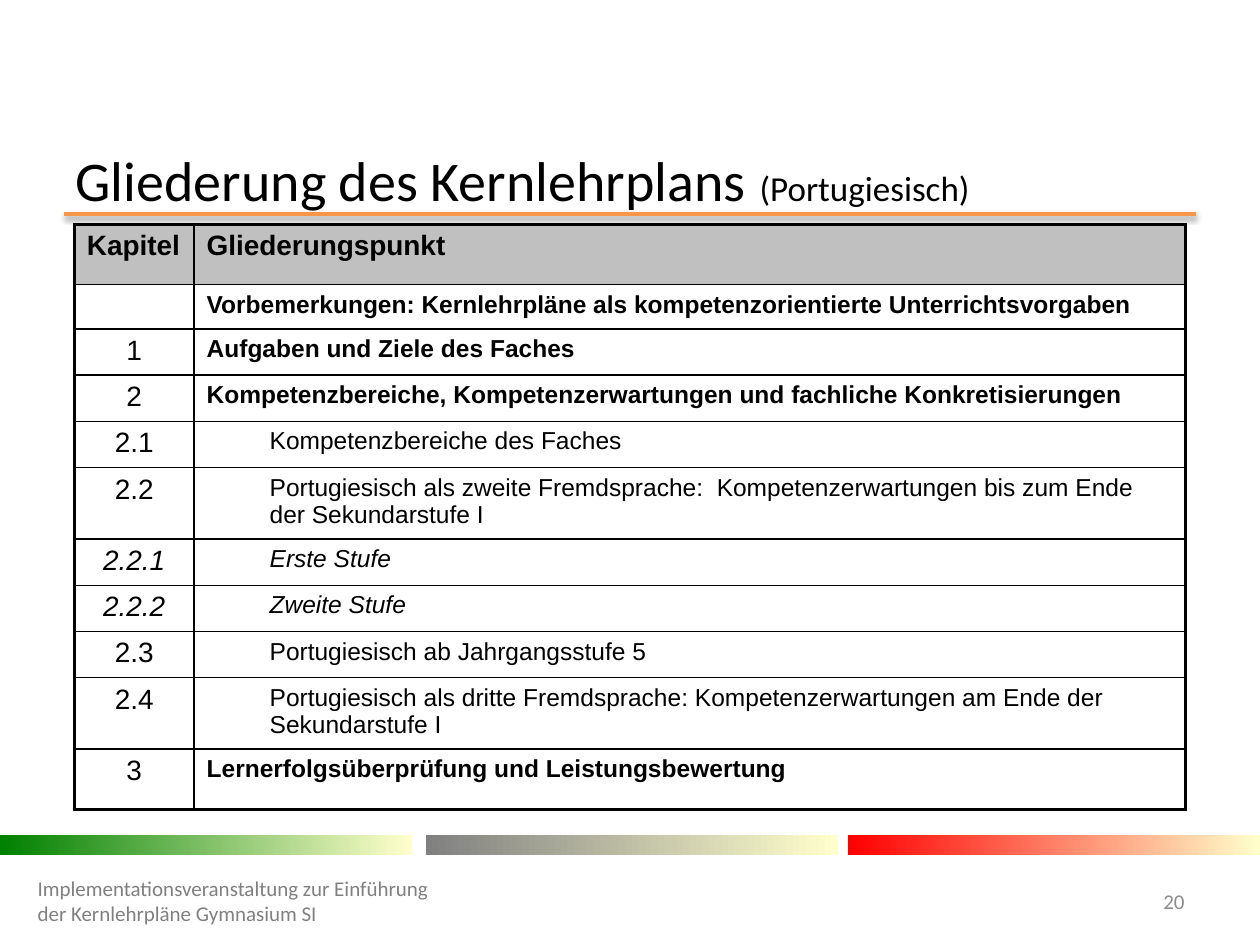
from dataclasses import dataclass

import pptx
import pptx.dml.color
import pptx.enum.shapes
import pptx.enum.text
import pptx.oxml
import pptx.oxml.ns
import pptx.util
from pptx.util import Inches, Pt

ALIGN = pptx.enum.text.PP_ALIGN
ANCHOR = pptx.enum.text.MSO_ANCHOR
THIN, THICK = 1, 2.25


@dataclass
class Bar:
    left: float
    start: str


@dataclass
class Entry:
    chapter: str
    text: str
    height: float = 0.35
    bold: bool = False
    italic: bool = False
    indent: float = 0.5


BARS = [Bar(0, "008000"), Bar(3.38, "808080"), Bar(6.73, "FF0000")]

ENTRIES = [
    Entry("Kapitel", "Gliederungspunkt", 0.48, bold=True, indent=0),
    Entry("", "Vorbemerkungen: Kernlehrpläne als kompetenzorientierte Unterrichtsvorgaben",
          bold=True, indent=0),
    Entry("1", "Aufgaben und Ziele des Faches", bold=True, indent=0),
    Entry("2", "Kompetenzbereiche, Kompetenzerwartungen und fachliche Konkretisierungen",
          bold=True, indent=0),
    Entry("2.1", "Kompetenzbereiche des Faches"),
    Entry("2.2", "Portugiesisch als zweite Fremdsprache:  Kompetenzerwartungen bis zum Ende "
          "der Sekundarstufe I", 0.54),
    Entry("2.2.1", "Erste Stufe", italic=True),
    Entry("2.2.2", "Zweite Stufe", italic=True),
    Entry("2.3", "Portugiesisch ab Jahrgangsstufe 5"),
    Entry("2.4", "Portugiesisch als dritte Fremdsprache: Kompetenzerwartungen am Ende der "
          "Sekundarstufe I", 0.54),
    Entry("3", "Lernerfolgsüberprüfung und Leistungsbewertung", 0.48, bold=True, indent=0),
]


def color(value: str) -> pptx.dml.color.RGBColor:
    return pptx.dml.color.RGBColor.from_string(value)


def parse_drawing(xml: str):
    """Parse an XML fragment whose root is in the a: namespace."""
    root, rest = xml.split(" ", 1)
    return pptx.oxml.parse_xml(f"{root} {pptx.oxml.ns.nsdecls('a')} {rest}")


def set_font(font, name: str, size: float, value: str = "000000",
             bold: bool = False, italic: bool = False) -> None:
    font.name, font.size = name, Pt(size)
    font.bold, font.italic = bold, italic
    font.color.rgb = color(value)


def add_title(slide) -> None:
    title = slide.shapes.title
    title.left, title.top = Inches(0.5), Inches(1.23)
    title.width, title.height = Inches(9), Inches(0.39)
    frame = title.text_frame
    frame.auto_size = pptx.enum.text.MSO_AUTO_SIZE.NONE
    frame.vertical_anchor = ANCHOR.MIDDLE
    paragraph = frame.paragraphs[0]
    paragraph.alignment = ALIGN.LEFT
    for text, size in (("Gliederung des Kernlehrplans ", 32), ("(Portugiesisch)", 20)):
        run = paragraph.add_run()
        run.text = text
        set_font(run.font, "Calibri", size)


def add_title_rule(slide) -> None:
    rule = slide.shapes.add_connector(
        pptx.enum.shapes.MSO_CONNECTOR.STRAIGHT,
        Inches(0.51), Inches(1.7), Inches(9.49), Inches(1.7))
    rule.line.color.rgb = color("F79646")
    rule.line.width = Pt(2)
    rule._element.spPr.append(parse_drawing(
        f'<a:effectLst ><a:outerShdw blurRad="{Pt(3.1)}" dist="{Pt(1.6)}" dir="5400000" '
        'rotWithShape="0"><a:srgbClr val="000000"><a:alpha val="38000"/></a:srgbClr>'
        '</a:outerShdw></a:effectLst>'))


def add_bar(slide, bar: Bar) -> None:
    shape = slide.shapes.add_shape(
        pptx.enum.shapes.MSO_SHAPE.RECTANGLE,
        Inches(bar.left), Inches(6.63), Inches(3.27), Inches(0.16))
    shape.shadow.inherit = False
    shape.line.fill.background()
    shape.fill.gradient()
    shape.fill.gradient_angle = 0
    for stop, value in zip(shape.fill.gradient_stops, (bar.start, "FFFFCC")):
        stop.color.rgb = color(value)


def add_footer_text(slide, text: str, left: float, width: float,
                    value: str, alignment) -> None:
    box = slide.shapes.add_textbox(Inches(left), Inches(6.95), Inches(width), Inches(0.4))
    frame = box.text_frame
    frame.word_wrap = True
    frame.vertical_anchor = ANCHOR.MIDDLE
    paragraph = frame.paragraphs[0]
    paragraph.text = text
    paragraph.alignment = alignment
    set_font(paragraph.font, "Calibri", 12, value)


def set_borders(cell, left: float, right: float, top: float, bottom: float) -> None:
    """Draw black borders of the given widths in points."""
    properties = cell._tc.get_or_add_tcPr()
    widths = {"lnL": left, "lnR": right, "lnT": top, "lnB": bottom}
    for position, (tag, width) in enumerate(widths.items()):
        properties.insert(position, parse_drawing(
            f'<a:{tag} w="{Pt(width)}"><a:solidFill><a:srgbClr val="000000"/>'
            f'</a:solidFill></a:{tag}>'))


def fill_row(table, index: int, entry: Entry) -> None:
    table.rows[index].height = Inches(entry.height)
    is_header = index == 0
    is_last = index == len(ENTRIES) - 1
    for column, text in enumerate((entry.chapter, entry.text)):
        cell = table.cell(index, column)
        is_chapter = column == 0
        if is_header:
            cell.fill.solid()
            cell.fill.fore_color.rgb = color("C0C0C0")
        else:
            cell.fill.background()
        set_borders(cell,
                    left=THICK if is_chapter else THIN,
                    right=THIN if is_chapter else THICK,
                    top=THICK if is_header else THIN,
                    bottom=THICK if is_last else THIN)
        if not text:
            cell.margin_top = cell.margin_bottom = 0
        paragraph = cell.text_frame.paragraphs[0]
        paragraph.text = text
        centred = is_chapter and not is_header
        paragraph.alignment = ALIGN.CENTER if centred else ALIGN.LEFT
        if not is_chapter and entry.indent:
            paragraph._p.get_or_add_pPr().set("marL", str(Inches(entry.indent)))
        set_font(paragraph.font, "Arial", 16 if is_chapter or is_header else 14,
                 bold=entry.bold and not centred, italic=entry.italic)


def add_outline_table(slide) -> None:
    height = sum(entry.height for entry in ENTRIES)
    table = slide.shapes.add_table(
        len(ENTRIES), 2, Inches(0.59), Inches(1.78), Inches(8.82), Inches(height)).table
    table.horz_banding = False
    table.columns[0].width = Inches(0.95)
    table.columns[1].width = Inches(7.87)
    for index, entry in enumerate(ENTRIES):
        fill_row(table, index, entry)


def main() -> None:
    presentation = pptx.Presentation()
    presentation.slide_width, presentation.slide_height = Inches(10), Inches(7.5)
    slide = presentation.slides.add_slide(presentation.slide_layouts[5])
    add_title_rule(slide)
    for bar in BARS:
        add_bar(slide, bar)
    add_title(slide)
    add_footer_text(
        slide, "Implementationsveranstaltung zur Einführung der Kernlehrpläne Gymnasium SI",
        0.2, 3.31, "808080", ALIGN.LEFT)
    add_footer_text(slide, "20", 8.86, 0.64, "8C8C8C", ALIGN.RIGHT)
    add_outline_table(slide)
    presentation.save("out.pptx")


if __name__ == "__main__":
    main()
